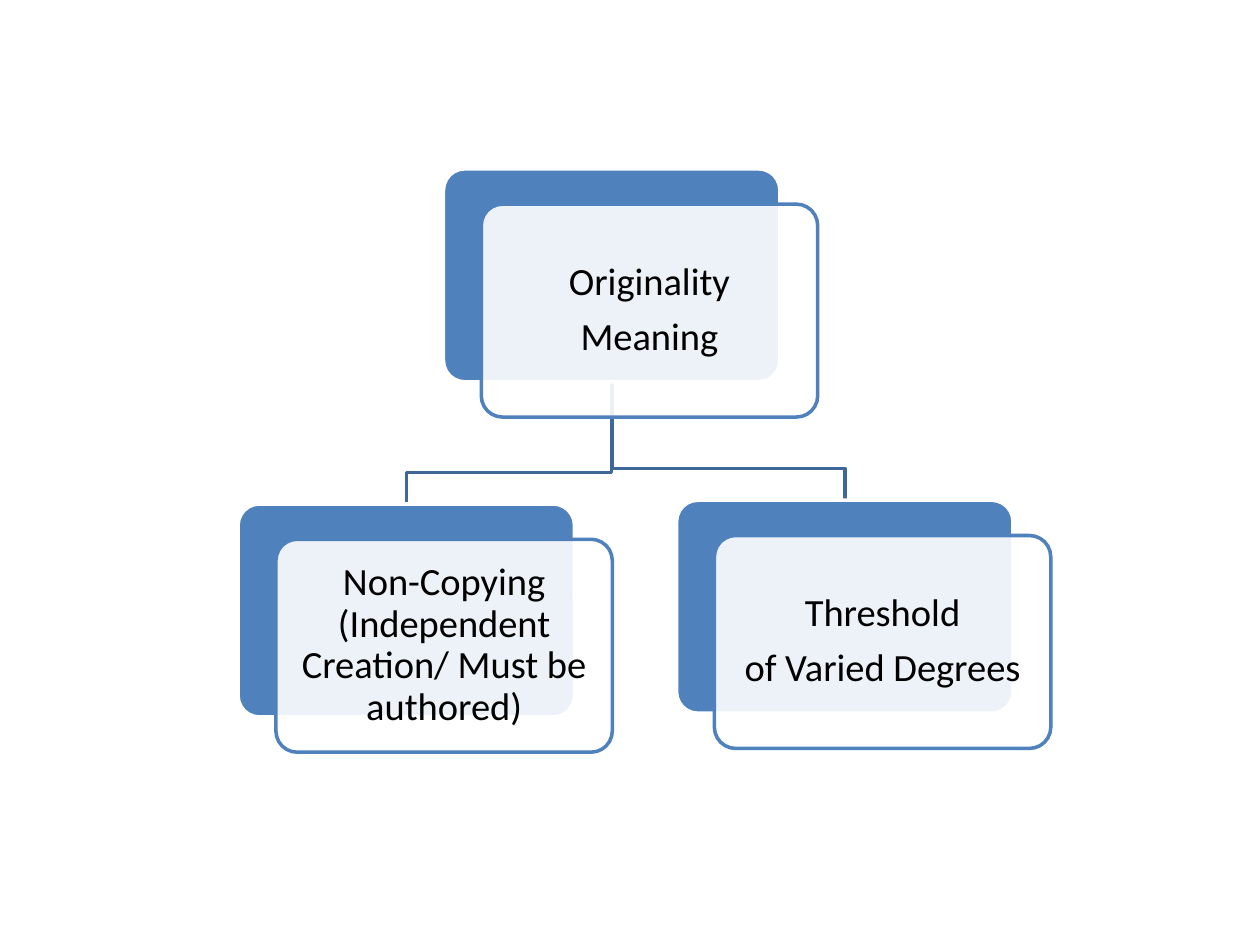
import pptx
import pptx.util
import pptx.dml.color
import pptx.enum.shapes
import pptx.enum.text
import pptx.oxml
import pptx.oxml.ns

Pt = pptx.util.Pt
RGB = pptx.dml.color.RGBColor.from_string

theme = {
    "font": "Calibri", "size": Pt(22), "gap": Pt(7.7), "line": Pt(2),
    "text": RGB("000000"), "blue": RGB("4F81BD"),
    "link": RGB("3F6797"), "white": RGB("FFFFFF"),
}

deck = pptx.Presentation()
deck.slide_width = pptx.util.Inches(10)
deck.slide_height = pptx.util.Inches(7.5)
slide = deck.slides.add_slide(deck.slide_layouts[6])

# Grid of 100 columns by 75 rows
unit = deck.slide_width / 100
wide, high = 26.7, 16.9      # card size
shift = (3, 2.8)             # offset of the front card
inset = 1.4                  # text margin
drop = 2.5                   # bend height above a child

root = (35.2, 13.4, ["Originality", "Meaning"])
kids = [
    (18.9, 40, ["Non-Copying (Independent Creation/ Must be authored)"]),
    (53.7, 39.7, ["Threshold", "of Varied Degrees"]),
]


def grid(*cells):
    return [round(cell * unit) for cell in cells]


def card(left, top, fill, line):
    box = slide.shapes.add_shape(
        pptx.enum.shapes.MSO_SHAPE.ROUNDED_RECTANGLE,
        *grid(left, top, wide, high))
    box.adjustments[0] = 0.1
    box.shadow.inherit = False
    box.fill.solid()
    box.fill.fore_color.rgb = fill
    box.line.color.rgb = line
    box.line.width = theme["line"]
    return box


# Links from the root down to each child
start = (root[0] + wide / 2, root[1] + high)
for left, top, _ in reversed(kids):
    end = left + wide / 2
    bend = top - drop
    pen = slide.shapes.build_freeform(*grid(*start))
    pen.add_line_segments(
        [grid(start[0], bend), grid(end, bend), grid(end, top)], close=False)
    link = pen.convert_to_shape()
    link.shadow.inherit = False
    link.fill.background()
    link.line.color.rgb = theme["link"]
    link.line.width = theme["line"]

# Cards: a solid back and a translucent front with the text
for left, top, lines in [root, *kids]:
    card(left, top, theme["blue"], theme["white"])
    front = card(left + shift[0], top + shift[1], theme["white"], theme["blue"])
    color = front.fill._xPr.find(".//" + pptx.oxml.ns.qn("a:srgbClr"))
    color.append(pptx.oxml.parse_xml(
        f'<a:alpha {pptx.oxml.ns.nsdecls("a")} val="90000"/>'))

    frame = front.text_frame
    frame.word_wrap = True
    frame.vertical_anchor = pptx.enum.text.MSO_ANCHOR.MIDDLE
    # The rounded outline already insets the text by 0.29 of its radius
    pad = inset - 0.29 * 0.1 * high
    frame.margin_left, frame.margin_right = grid(pad, pad)
    frame.margin_top, frame.margin_bottom = grid(pad, pad)
    frame.text = "\n".join(lines)
    for para in frame.paragraphs:
        para.alignment = pptx.enum.text.PP_ALIGN.CENTER
        para.line_spacing = 0.9
        para.space_after = theme["gap"]
        para.font.name = theme["font"]
        para.font.size = theme["size"]
        para.font.color.rgb = theme["text"]

deck.save("out.pptx")
